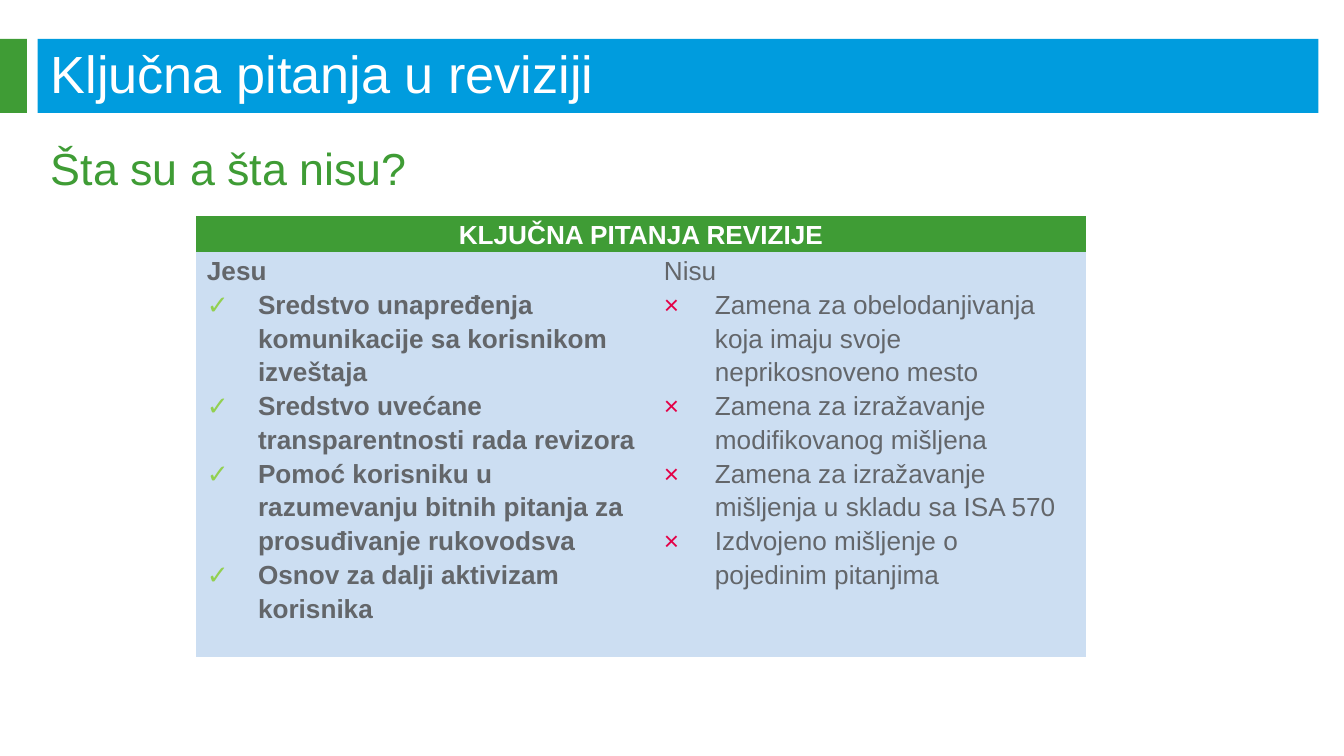
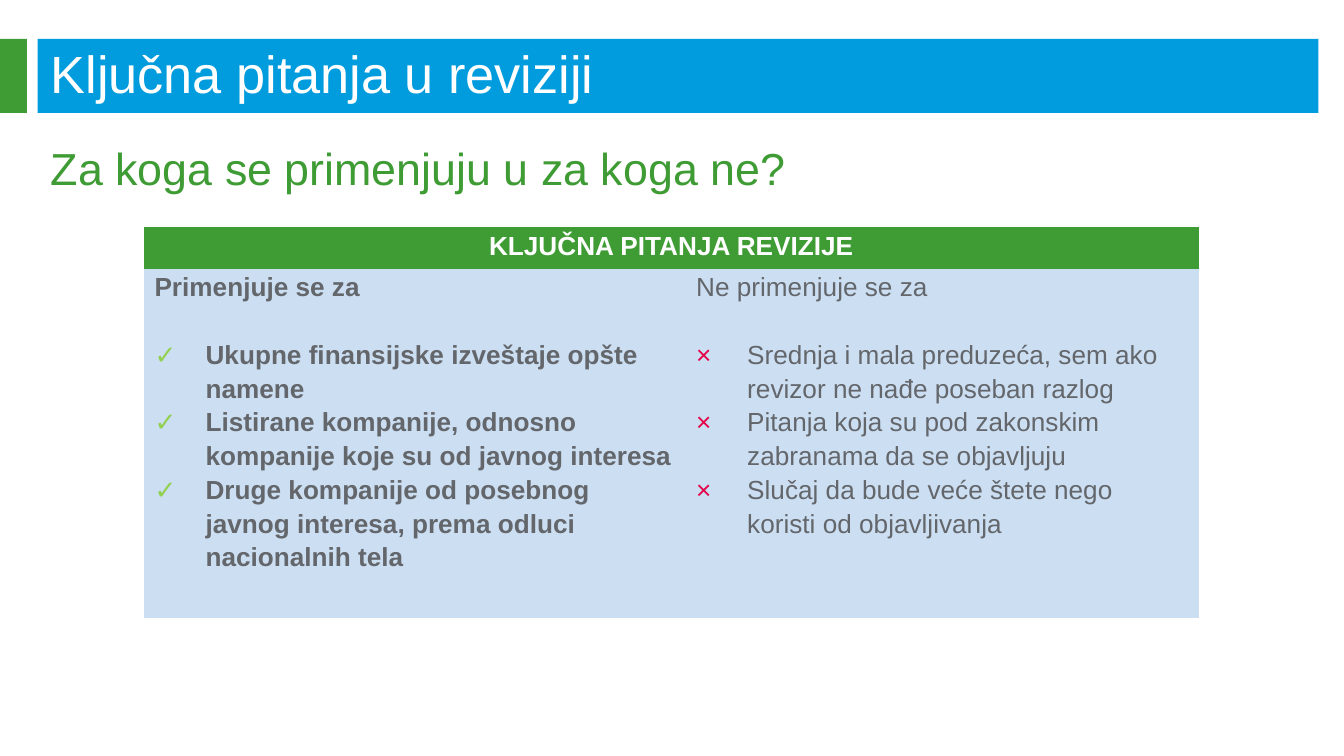
from lxml import etree
from pptx import Presentation
from pptx.dml.color import RGBColor
from pptx.enum.shapes import MSO_SHAPE
from pptx.enum.text import MSO_ANCHOR, PP_ALIGN
from pptx.oxml.ns import qn
from pptx.util import Inches, Pt

RECT = MSO_SHAPE.RECTANGLE
MIDDLE, TOP = MSO_ANCHOR.MIDDLE, MSO_ANCHOR.TOP
CENTER = PP_ALIGN.CENTER
PLAIN = "{2D5ABB26-0587-4C30-8999-92F81FD0307C}"
FONT = "Arial"

COLORS = {
    "blue": "009CDE", "green": "3F9C35", "white": "FFFFFF", "gray": "63666A",
    "pale": "CCDEF2", "lime": "92D050", "red": "E40046",
}

TITLE = "Ključna pitanja u reviziji"
HEAD = "KLJUČNA PITANJA REVIZIJE"
MARKS = [("✓", "lime", True), ("×", "red", False)]
BANDS = [("blue", 0.28, 9.53), ("green", 0, 0.2)]

SLIDES = [
    {
        "topic": "Šta su a šta nisu?",
        "at": (1.46, 1.61), "cols": (3.4, 3.22), "rows": (0.25, 3.01), "gap": 0,
        "lists": [
            ("Jesu", [
                "Sredstvo unapređenja komunikacije sa korisnikom izveštaja",
                "Sredstvo uvećane transparentnosti rada revizora",
                "Pomoć korisniku u razumevanju bitnih pitanja za prosuđivanje rukovodsva",
                "Osnov za dalji aktivizam korisnika",
            ]),
            ("Nisu", [
                "Zamena za obelodanjivanja koja imaju svoje neprikosnoveno mesto",
                "Zamena za izražavanje modifikovanog mišljena",
                "Zamena za izražavanje mišljenja u skladu sa ISA 570",
                "Izdvojeno mišljenje o pojedinim pitanjima",
            ]),
        ],
    },
    {
        "topic": "Za koga se primenjuju u za koga ne?",
        "at": (1.07, 1.69), "cols": (4.03, 3.82), "rows": (0.31, 2.6), "gap": 18,
        "lists": [
            ("Primenjuje se za", [
                "Ukupne finansijske izveštaje opšte namene",
                "Listirane kompanije, odnosno kompanije koje su od javnog interesa",
                "Druge kompanije od posebnog javnog interesa, prema odluci nacionalnih tela",
            ]),
            ("Ne primenjuje se za", [
                "Srednja i mala preduzeća, sem ako revizor ne nađe poseban razlog",
                "Pitanja koja su pod zakonskim zabranama da se objavljuju",
                "Slučaj da bude veće štete nego koristi od objavljivanja",
            ]),
        ],
    },
]


def rgb(name):
    return RGBColor.from_string(COLORS[name])


def paint(fill, name):
    fill.solid()
    fill.fore_color.rgb = rgb(name)


def assign(item, **values):
    for key, value in values.items():
        setattr(item, key, value)


def write(para, text, size, color, bold=False, **style):
    run = para.add_run()
    run.text = text
    assign(para, **style)
    assign(run.font, name=FONT, size=Pt(size), bold=bold)
    run.font.color.rgb = rgb(color)


def bullet(para, mark, color):
    props = para._p.get_or_add_pPr()
    indent = Inches(0.38)
    props.set("marL", str(indent))
    props.set("indent", str(-indent))
    tint = etree.SubElement(props, qn("a:buClr"))
    etree.SubElement(tint, qn("a:srgbClr")).set("val", COLORS[color])
    etree.SubElement(props, qn("a:buFont")).set("typeface", FONT)
    etree.SubElement(props, qn("a:buChar")).set("char", mark)


def band(slide, color, left, width):
    shape = slide.shapes.add_shape(
        RECT, Inches(left), Inches(0.29), Inches(width), Inches(0.55))
    shape.shadow.inherit = False
    paint(shape.fill, color)
    shape.line.fill.background()


def label(slide, text, box, size, color, anchor):
    frame = slide.shapes.add_textbox(*map(Inches, box)).text_frame
    assign(frame, word_wrap=True, vertical_anchor=anchor)
    write(frame.paragraphs[0], text, size, color)


def fill_list(cell, title, items, mark, color, bold, gap):
    frame = cell.text_frame
    write(frame.paragraphs[0], title, 14, "gray", bold,
          line_spacing=1.15, space_after=Pt(gap))
    for item in items:
        para = frame.add_paragraph()
        bullet(para, mark, color)
        write(para, item, 14, "gray", bold, line_spacing=1.15)


def add_grid(slide, data):
    cols, rows = data["cols"], data["rows"]
    box = (*data["at"], sum(cols), sum(rows))
    table = slide.shapes.add_table(2, 2, *map(Inches, box)).table
    assign(table, first_row=False, horz_banding=False)
    table._tbl.tblPr.find(qn("a:tableStyleId")).text = PLAIN
    for col, width in zip(table.columns, cols):
        col.width = Inches(width)
    for row, height, color in zip(table.rows, rows, ("green", "pale")):
        row.height = Inches(height)
        for cell in row.cells:
            paint(cell.fill, color)
            assign(cell, margin_left=Inches(0.08), margin_right=Inches(0.08),
                   margin_top=0, margin_bottom=0)
    head, spare = table.rows[0].cells
    head.merge(spare)
    end = etree.SubElement(spare.text_frame.paragraphs[0]._p, qn("a:endParaRPr"))
    end.set("sz", "1400")
    write(head.text_frame.paragraphs[0], HEAD, 14, "white", True,
          alignment=CENTER, line_spacing=1.15)
    for cell, (title, items), mark in zip(table.rows[1].cells, data["lists"], MARKS):
        fill_list(cell, title, items, *mark, data["gap"])


def main():
    deck = Presentation()
    wide = Inches(10)
    assign(deck, slide_width=wide, slide_height=wide * 9 // 16)
    for data in SLIDES:
        slide = deck.slides.add_slide(deck.slide_layouts[6])
        for color, left, width in BANDS:
            band(slide, color, left, width)
        label(slide, TITLE, (0.28, 0.39, 9.45, 0.3), 28, "white", MIDDLE)
        label(slide, data["topic"], (0.28, 1, 9.53, 0.53), 24, "green", TOP)
        add_grid(slide, data)
    deck.save("out.pptx")


if __name__ == "__main__":
    main()
